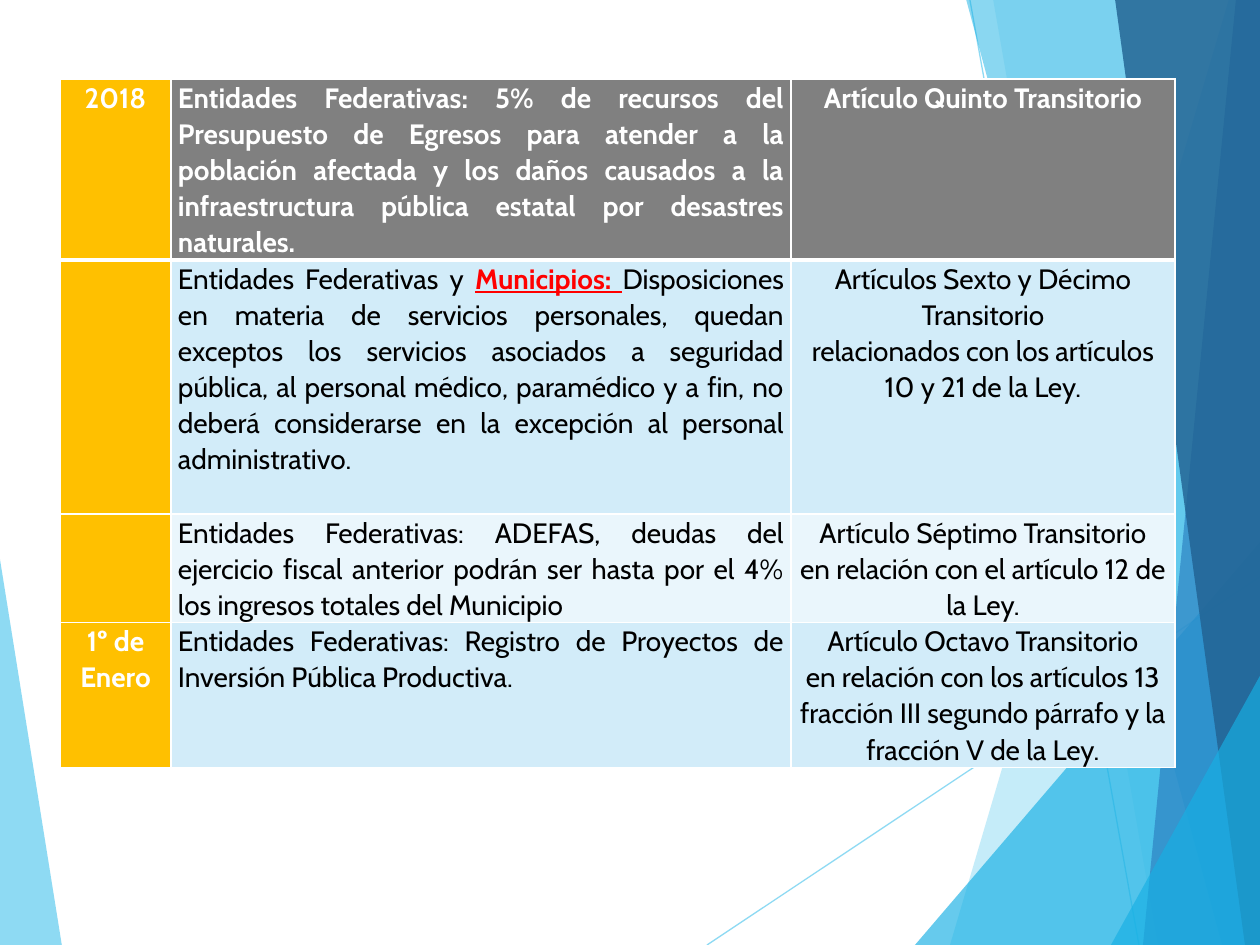
from lxml.etree import SubElement
from pptx import Presentation
from pptx.dml.color import RGBColor
from pptx.enum.shapes import MSO_CONNECTOR
from pptx.enum.text import PP_ALIGN
from pptx.oxml.ns import qn
from pptx.util import Pt

SCALE = 914400 / 126
WIDTH, HEIGHT = 1260, 945
EDGE = WIDTH + 1

LEFT_WEDGE = [(-1, 553), (62, 946), (-1, 945)]
LINES = [(707, 945, 1261, 576), (970, 0, 1139, 945)]

COLUMNS = [111, 620, 384]
ROWS = [180, 254, 108, 145]
ALIGNMENTS = [PP_ALIGN.CENTER, PP_ALIGN.JUSTIFY, PP_ALIGN.CENTER]
FILLS = ["808080", "D2ECF9", "EAF6FC", "D2ECF9"]
DATE_FILL = "FFC000"

PLAIN = {"bold": False}
HIGHLIGHT = {"bold": True, "underline": True}
CONTENT = [
    ["2018",
     "Entidades Federativas: 5% de recursos del Presupuesto de Egresos para atender a la "
     "población afectada y los daños causados a la infraestructura pública estatal por "
     "desastres naturales.",
     "Artículo Quinto Transitorio"],
    ["",
     [("Entidades Federativas y ", "000000", PLAIN),
      ("Municipios: ", "FF0000", HIGHLIGHT),
      ("Disposiciones en materia de servicios personales, quedan exceptos los servicios "
       "asociados a seguridad pública, al personal médico, paramédico y a fin, no deberá "
       "considerarse en la excepción al personal administrativo.", "000000", PLAIN)],
     "Artículos Sexto y Décimo Transitorio\n"
     "relacionados con los artículos 10 y 21 de la Ley."],
    ["",
     "Entidades Federativas: ADEFAS, deudas del ejercicio fiscal anterior podrán ser hasta "
     "por el 4% los ingresos totales del Municipio",
     "Artículo Séptimo Transitorio\nen relación con el artículo 12 de la Ley."],
    ["1º de Enero",
     "Entidades Federativas: Registro de Proyectos de Inversión Pública Productiva.",
     "Artículo Octavo Transitorio\n"
     "en relación con los artículos 13 fracción III segundo párrafo y la fracción V de la Ley."],
]


def px(length):
    """Turn pixels into EMU."""
    return round(length * SCALE)


def color(value):
    """Turn a hex string into a colour."""
    return RGBColor.from_string(value)


def set_format(target, values):
    """Set each attribute named in a dict of format values."""
    for name, value in values.items():
        setattr(target, name, value)


def set_alpha(element, percent):
    """Make the first solid colour inside an element translucent."""
    rgb = next(element.iter(qn("a:srgbClr")))
    SubElement(rgb, qn("a:alpha"), val=str(percent * 1000))


def panel(top, bottom):
    """Return a full-height panel reaching the right edge."""
    return [(top, -1), (bottom, HEIGHT), (EDGE, HEIGHT), (EDGE, -1)]


def wedge(left, top):
    """Return a triangle in the lower right corner."""
    return [(left, HEIGHT), (EDGE, top), (EDGE, HEIGHT)]


def add_polygon(slide, points, fill, alpha):
    """Draw a translucent polygon without outline."""
    builder = slide.shapes.build_freeform(*points[0], scale=SCALE)
    builder.add_line_segments(points[1:], close=True)
    shape = builder.convert_to_shape()
    shape.shadow.inherit = False
    shape.fill.solid()
    shape.fill.fore_color.rgb = color(fill)
    set_alpha(shape.fill._xPr, alpha)
    shape.line.fill.background()


def add_line(slide, ends):
    """Draw a thin translucent line."""
    connector = slide.shapes.add_connector(MSO_CONNECTOR.STRAIGHT, *map(px, ends))
    connector.line.color.rgb = color("5FCBEF")
    connector.line.width = Pt(0.75)
    properties = connector._element.spPr
    set_alpha(properties, 70)
    SubElement(properties, qn("a:effectLst"))


def set_borders(cell, row):
    """Give a cell white borders, thicker under the first row."""
    properties = cell._tc.get_or_add_tcPr()
    widths = {"L": 1, "R": 1, "T": 3 if row == 1 else 1, "B": 3 if row == 0 else 1}
    for side, width in widths.items():
        line = SubElement(properties, qn(f"a:ln{side}"), w=str(Pt(width)))
        fill = SubElement(line, qn("a:solidFill"))
        SubElement(fill, qn("a:srgbClr"), val="FFFFFF")


def write_cell(cell, content, alignment, heading):
    """Write paragraphs of formatted runs into a cell."""
    style = ("FFFFFF", {"bold": True}) if heading else ("000000", PLAIN)
    if isinstance(content, str):
        paragraphs = [[(line, *style)] for line in content.split("\n")]
    else:
        paragraphs = [content]
    frame = cell.text_frame
    for index, runs in enumerate(paragraphs):
        paragraph = frame.add_paragraph() if index else frame.paragraphs[0]
        set_format(paragraph, {"alignment": alignment, "line_spacing": 1.07})
        for text, text_color, values in runs:
            run = paragraph.add_run()
            run.text = text
            set_format(run.font, {"name": "Cabin", "size": Pt(16), **values})
            run.font.color.rgb = color(text_color)


def add_schedule(slide):
    """Add the table of dates, obligations and articles."""
    frame = slide.shapes.add_table(len(ROWS), len(COLUMNS), px(60), px(79),
                                   px(sum(COLUMNS)), px(sum(ROWS)))
    table = frame.table
    for column, width in zip(table.columns, COLUMNS):
        column.width = px(width)
    for row, height in zip(table.rows, ROWS):
        row.height = px(height)
    margins = {"margin_left": px(7), "margin_right": px(7),
               "margin_top": 0, "margin_bottom": 0}
    for row, contents in enumerate(CONTENT):
        for column, content in enumerate(contents):
            cell = table.cell(row, column)
            set_format(cell, margins)
            set_borders(cell, row)
            cell.fill.solid()
            cell.fill.fore_color.rgb = color(FILLS[row] if column else DATE_FILL)
            if content:
                write_cell(cell, content, ALIGNMENTS[column], row == 0 or column == 0)


def main():
    """Build the slide and save it."""
    presentation = Presentation()
    set_format(presentation, {"slide_width": px(WIDTH), "slide_height": px(HEIGHT)})
    slide = presentation.slides.add_slide(presentation.slide_layouts[6])
    add_polygon(slide, LEFT_WEDGE, "5FCBEF", 70)
    for ends in LINES:
        add_line(slide, ends)
    for points, fill, alpha in [
        (panel(1229, 950), "5FCBEF", 36),
        (panel(993, 1158), "5FCBEF", 20),
        (wedge(915, 541), "17B0E4", 66),
        (panel(966, 1222), "17B0E4", 50),
        (panel(1236, 1143), "2E83C3", 70),
        (panel(1115, 1245), "226292", 82),
        (wedge(1111, 674), "17B0E4", 66),
    ]:
        add_polygon(slide, points, fill, alpha)
    add_schedule(slide)
    presentation.save("out.pptx")


if __name__ == "__main__":
    main()
